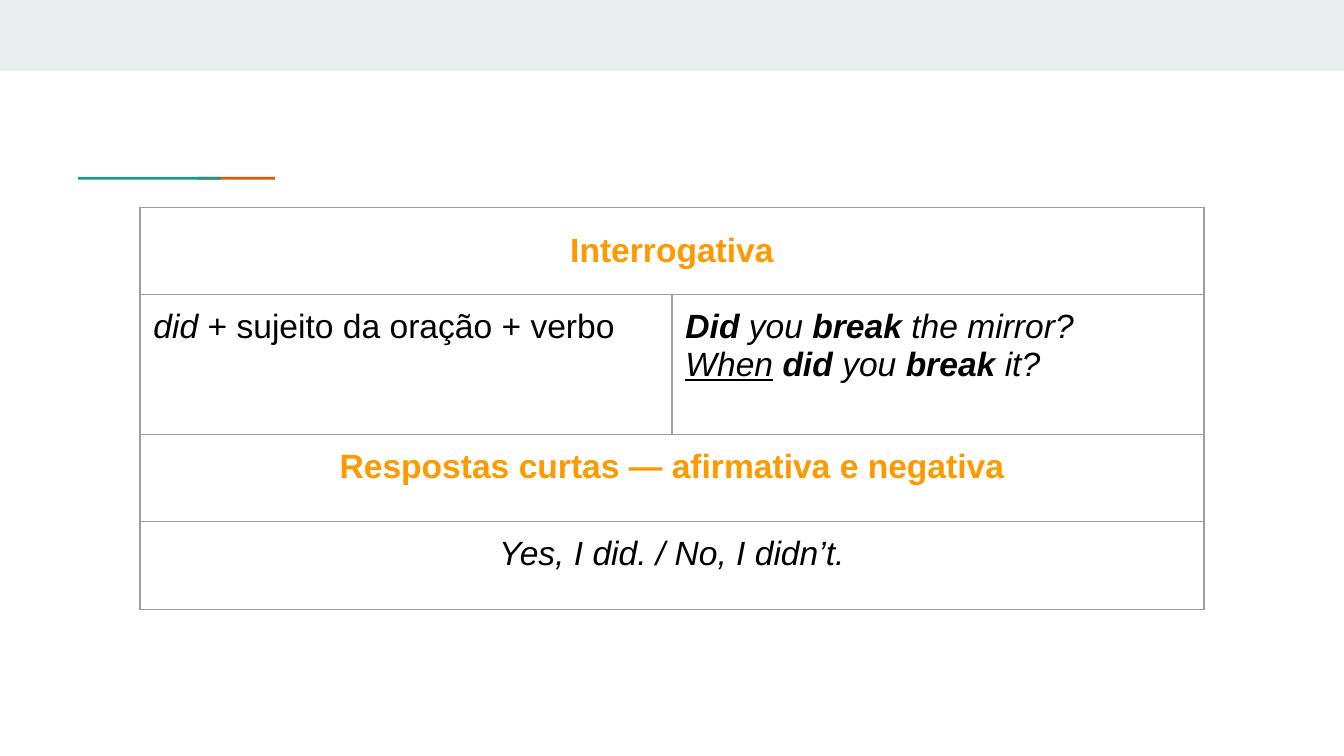
import pptx
import pptx.util
import pptx.oxml
import pptx.dml.color
import pptx.enum.shapes
import pptx.enum.text
from lxml import etree

Pt = pptx.util.Pt
CENTER = pptx.enum.text.PP_ALIGN.CENTER
LEFT = pptx.enum.text.PP_ALIGN.LEFT
TOP = pptx.enum.text.MSO_ANCHOR.TOP
MIDDLE = pptx.enum.text.MSO_ANCHOR.MIDDLE
HEADING, BODY = "FF9900", "000000"
BORDER = "9E9E9E"

# Each row: (height, anchor, alignment, colour, cells); a cell is a list of
# paragraphs, a paragraph a list of (text, style letters) runs.
GRAMMAR_ROWS = [
    (46.8, MIDDLE, CENTER, HEADING, [[[("Interrogativa", "b")]]]),
    (75, TOP, LEFT, BODY, [
        [[("did ", "i"), ("+ sujeito da oração + verbo", "")]],
        [[("Did ", "bi"), ("you ", "i"), ("break ", "bi"), ("the mirror?", "i")],
         [("When", "iu"), (" ", "i"), ("did ", "bi"), ("you ", "i"),
          ("break ", "bi"), ("it?", "i")]],
    ]),
    (46.8, TOP, CENTER, HEADING,
     [[[("Respostas curtas — afirmativa e negativa", "b")]]]),
    (46.8, TOP, CENTER, BODY, [[[("Yes, I did. / No, I didn’t.", "i")]]]),
]


def color(hex_value):
    return pptx.dml.color.RGBColor.from_string(hex_value)


def add_bar(slide, left, top, width, height, fill):
    bar = slide.shapes.add_shape(
        pptx.enum.shapes.MSO_SHAPE.RECTANGLE,
        Pt(left), Pt(top), Pt(width), Pt(height))
    bar.shadow.inherit = False
    bar.fill.solid()
    bar.fill.fore_color.rgb = color(fill)
    bar.line.fill.background()


def add_accent(slide, left, top, width, height):
    """Two-coloured line, teal overlapping orange."""
    part = width * 0.39
    add_bar(slide, left + width - part, top, part, height, "EB5600")
    add_bar(slide, left, top, width * 0.725, height, "1A9988")


def set_borders(cell):
    properties = cell._tc.get_or_add_tcPr()
    for index, side in enumerate(("lnL", "lnR", "lnT", "lnB")):
        line = etree.Element(pptx.oxml.ns.qn(f"a:{side}"), w=str(Pt(0.75)))
        fill = etree.SubElement(line, pptx.oxml.ns.qn("a:solidFill"))
        etree.SubElement(fill, pptx.oxml.ns.qn("a:srgbClr"), val=BORDER)
        properties.insert(index, line)


def fill_cell(cell, paragraphs, alignment, text_color):
    frame = cell.text_frame
    for index, runs in enumerate(paragraphs):
        paragraph = frame.add_paragraph() if index else frame.paragraphs[0]
        paragraph.alignment = alignment
        for text, style in runs:
            run = paragraph.add_run()
            run.text = text
            run.font.name = "Arial"
            run.font.size = Pt(18)
            run.font.color.rgb = color(text_color)
            run.font.bold = "b" in style
            run.font.italic = "i" in style
            run.font.underline = "u" in style


def add_grammar_table(slide, left, top, width):
    height = sum(row[0] for row in GRAMMAR_ROWS)
    table = slide.shapes.add_table(
        len(GRAMMAR_ROWS), 2, Pt(left), Pt(top), Pt(width), Pt(height)).table
    table.first_row = table.horz_banding = False
    for column in table.columns:
        column.width = Pt(width / 2)

    for index, (row_height, anchor, alignment, text_color, cells) in enumerate(GRAMMAR_ROWS):
        table.rows[index].height = Pt(row_height)
        for column in range(2):
            cell = table.cell(index, column)
            cell.fill.background()
            cell.vertical_anchor = anchor
            cell.margin_left = cell.margin_right = Pt(7.2)
            cell.margin_top = cell.margin_bottom = Pt(7.2)
            set_borders(cell)
        # A single cell spans the whole row
        if len(cells) == 1:
            table.cell(index, 0).merge(table.cell(index, 1))
        for column, paragraphs in enumerate(cells):
            fill_cell(table.cell(index, column), paragraphs, alignment, text_color)


def main():
    deck = pptx.Presentation()
    deck.slide_width, deck.slide_height = Pt(720), Pt(405)
    slide = deck.slides.add_slide(deck.slide_layouts[6])

    # Header band and accent line
    add_bar(slide, 0, 0, 720, 38.2, "E9EDEE")
    add_accent(slide, 41.8, 94.8, 105.6, 1.5)

    # Grammar table
    add_grammar_table(slide, 75, 111, 570)

    deck.save("out.pptx")


if __name__ == "__main__":
    main()
